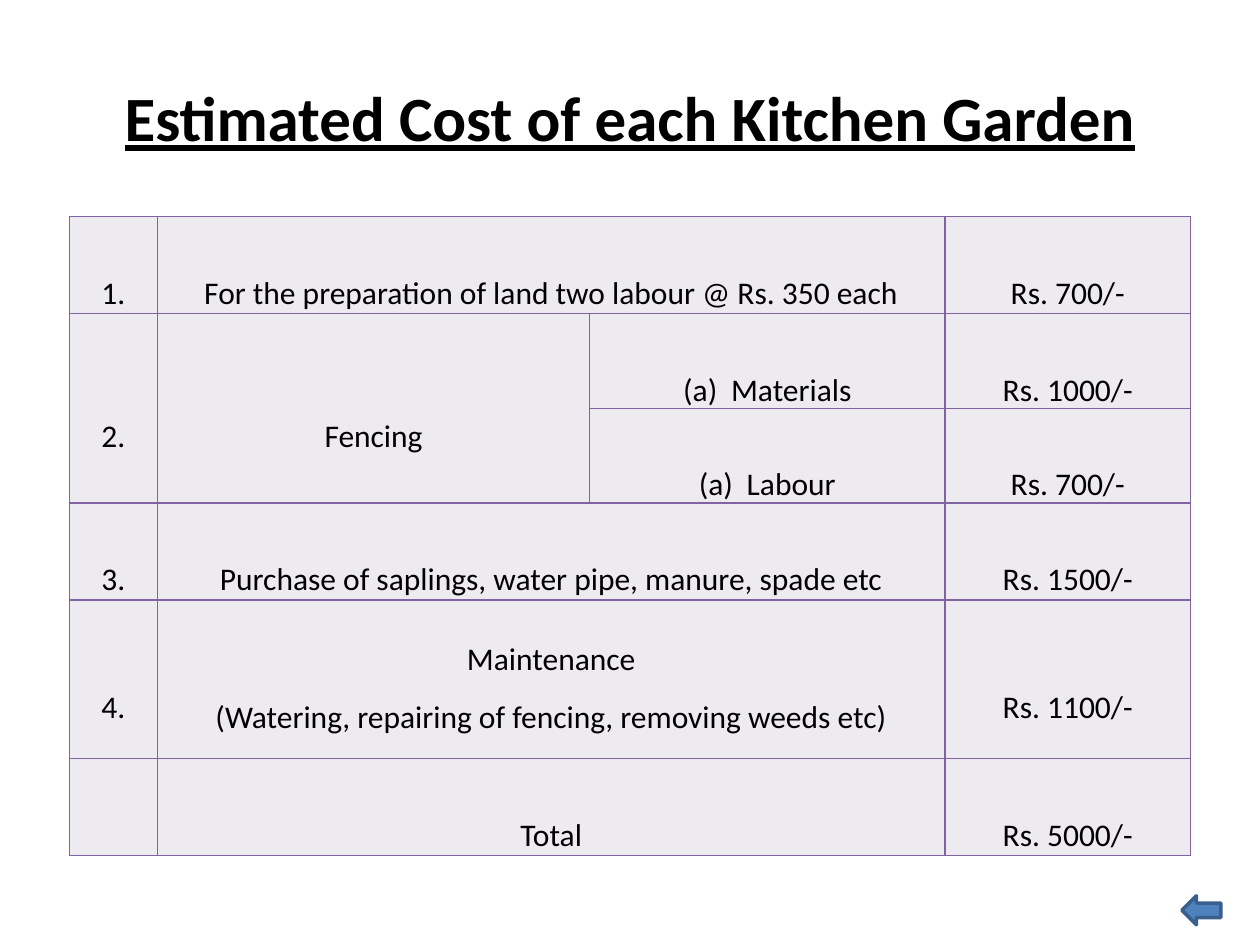
from lxml import etree
from pptx import Presentation
from pptx import util as u
from pptx.dml.color import RGBColor
from pptx.enum import shapes, text
from pptx.oxml.ns import qn

HUES = {"ink": "000000", "cell": "EDEAF0", "rule": "8064A2",
        "arrow": "4F81BD", "edge": "3A5F8C"}
COLS = [0.7, 3.43, 2.82, 1.95]
ROWS = [0.77, 0.64, 0.57, 0.77, 1.26, 0.77]
COSTS = [
    ["1.", "For the preparation of land two labour @ Rs. 350 each", None, "Rs. 700/-"],
    ["2.", "Fencing", "Materials", "Rs. 1000/-"],
    [None, None, "Labour", "Rs. 700/-"],
    ["3.", "Purchase of saplings, water pipe, manure, spade etc", None, "Rs. 1500/-"],
    ["4.", "Maintenance\n(Watering, repairing of fencing, removing weeds etc)", None, "Rs. 1100/-"],
    [None, "Total", None, "Rs. 5000/-"],
]
# first row, first column, last row, last column
SPANS = [(r, 1, r, 2) for r in (0, 3, 4, 5)] + [(1, c, 2, c) for c in (0, 1)]


def hue(name):
    return RGBColor.from_string(HUES[name])


def write(frame, words, size=18, bold=False, under=False, space=1.0, letter=False):
    """Fill a text frame, one paragraph a line; letter numbers them (a), (b)..."""
    frame.text = words
    frame.word_wrap = True
    for para in frame.paragraphs:
        para.alignment = text.PP_ALIGN.CENTER
        para.line_spacing = space
        font = para.runs[0].font
        font.name, font.size = "Calibri", u.Pt(size)
        font.bold, font.underline = bold, under
        font.color.rgb = hue("ink")
        if letter:
            props = para._p.get_or_add_pPr()
            props.set("marL", str(u.Inches(0.38)))
            props.set("indent", str(-u.Inches(0.38)))
            etree.SubElement(props, qn("a:buAutoNum"), type="alphaLcParenBoth")


def border(cell):
    props = cell._tc.get_or_add_tcPr()
    for i, side in enumerate("LRTB"):
        line = etree.Element(qn(f"a:ln{side}"), w=str(u.Pt(1)))
        fill = etree.SubElement(line, qn("a:solidFill"))
        etree.SubElement(fill, qn("a:srgbClr"), val=HUES["rule"])
        props.insert(i, line)


class Page:
    def __init__(self, deck):
        self.slide = deck.slides.add_slide(deck.slide_layouts[6])

    def title(self, words, *box):
        frame = self.slide.shapes.add_textbox(*map(u.Inches, box)).text_frame
        frame.vertical_anchor = text.MSO_ANCHOR.MIDDLE
        write(frame, words, size=36, bold=True, under=True)

    def table(self, left, top):
        box = [u.Inches(n) for n in (left, top, sum(COLS), sum(ROWS))]
        grid = self.slide.shapes.add_table(len(ROWS), len(COLS), *box).table
        grid.first_row = grid.horz_banding = False
        for col, wide in zip(grid.columns, COLS):
            col.width = u.Inches(wide)
        for row, high in zip(grid.rows, ROWS):
            row.height = u.Inches(high)
        for r, line in enumerate(COSTS):
            for c, words in enumerate(line):
                self.cell(grid.cell(r, c), words, letter=c == 2)
        for r, c, last, end in SPANS:
            grid.cell(r, c).merge(grid.cell(last, end))

    def cell(self, cell, words, letter):
        cell.fill.solid()
        cell.fill.fore_color.rgb = hue("cell")
        border(cell)
        cell.vertical_anchor = text.MSO_ANCHOR.MIDDLE
        cell.margin_left = cell.margin_right = u.Inches(0.06)
        cell.margin_top = cell.margin_bottom = 0
        if words:
            space = 1.5 if "\n" in words else 2.5
            write(cell.text_frame, words, space=space, letter=letter)

    def arrow(self, *box):
        kind = shapes.MSO_SHAPE.LEFT_ARROW
        shape = self.slide.shapes.add_shape(kind, *map(u.Inches, box))
        shape.shadow.inherit = False
        shape.fill.solid()
        shape.fill.fore_color.rgb = hue("arrow")
        shape.line.color.rgb = hue("edge")
        shape.line.width = u.Pt(2)


def main():
    deck = Presentation()
    deck.slide_width, deck.slide_height = u.Inches(10), u.Inches(7.5)
    page = Page(deck)
    page.title("Estimated Cost of each Kitchen Garden", 0.5, 0.3, 9, 1.25)
    page.table(0.55, 1.72)
    page.arrow(9.38, 7.11, 0.31, 0.23)
    deck.save("out.pptx")


if __name__ == "__main__":
    main()
